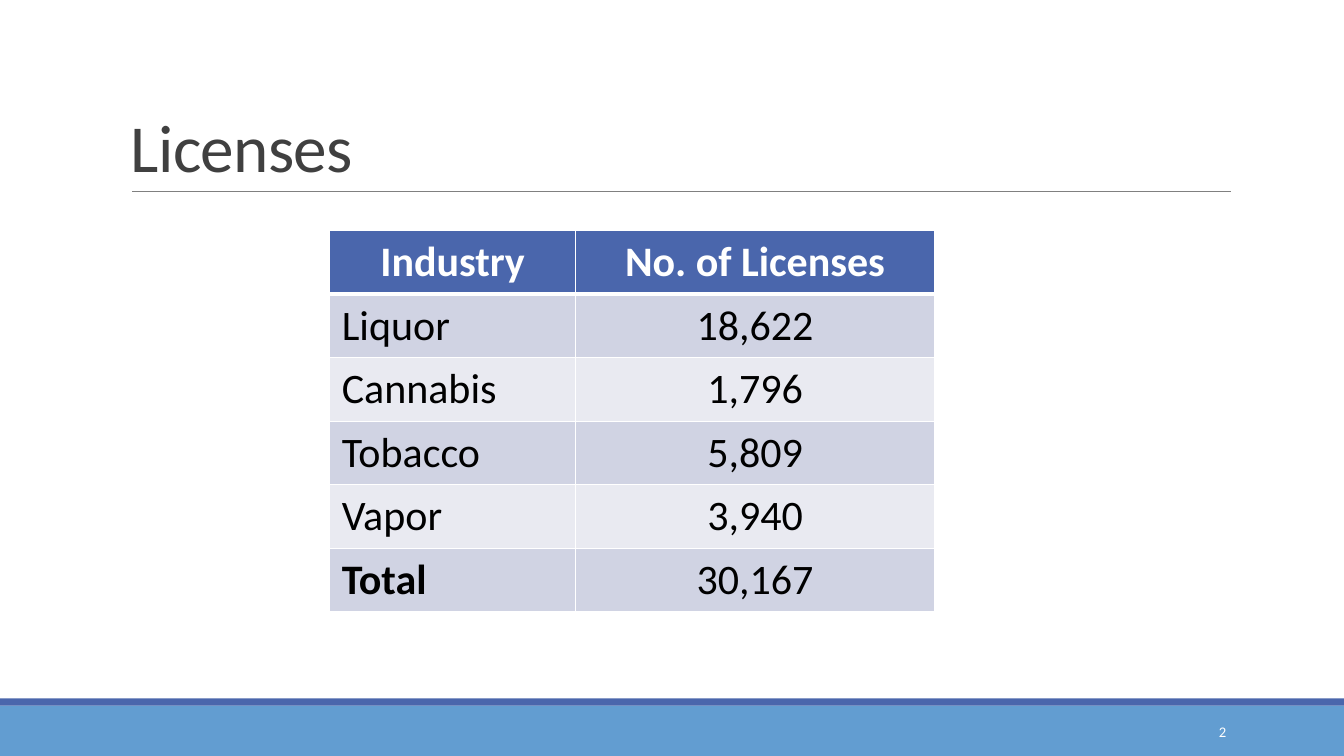
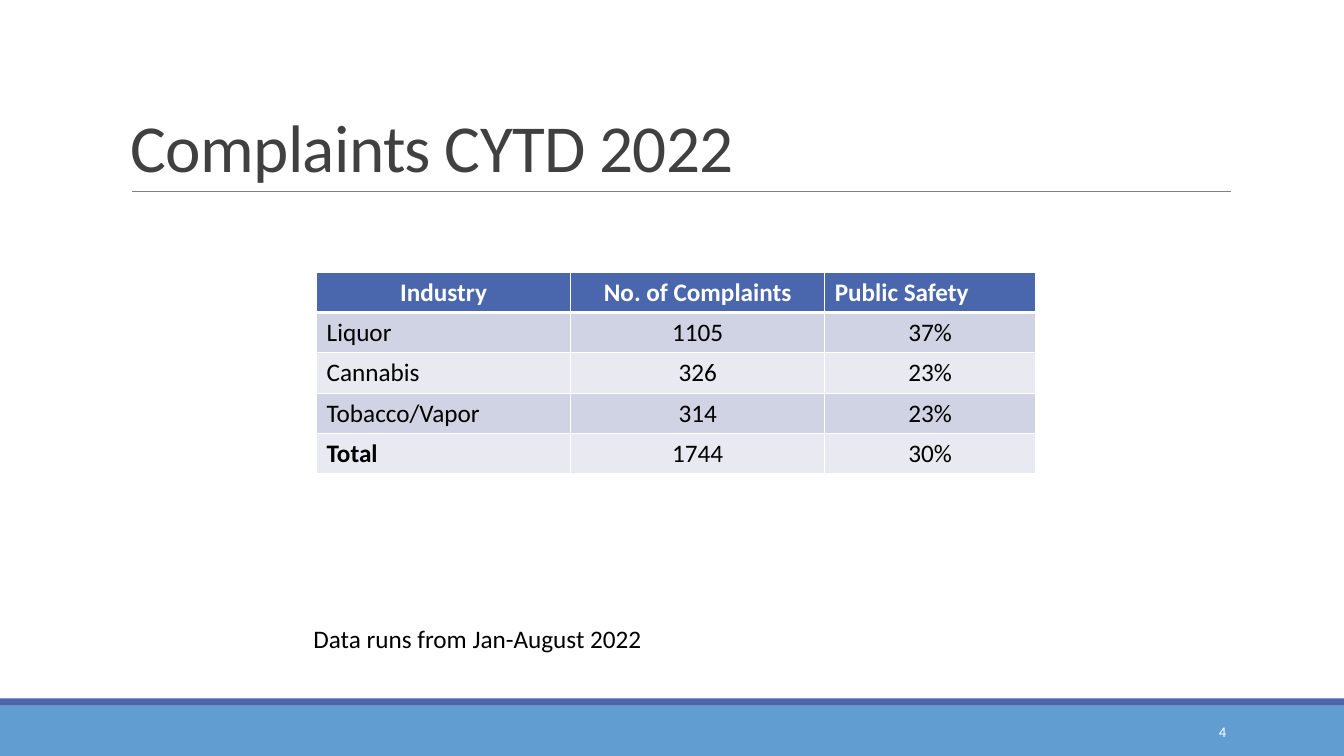
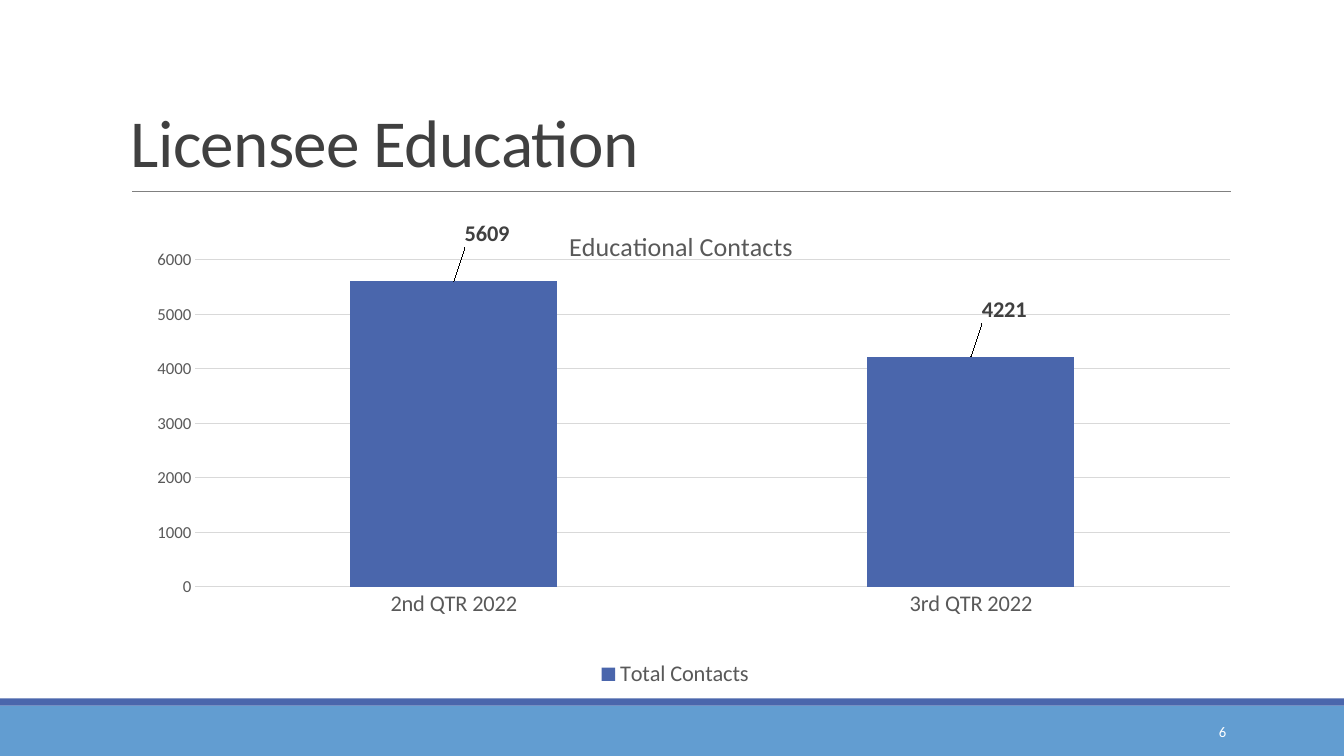
from dataclasses import dataclass
from lxml.etree import SubElement as Sub
from pptx import Presentation
from pptx.chart.data import CategoryChartData as ChartData
from pptx.dml.color import RGBColor as RGB
from pptx.enum.chart import XL_CHART_TYPE as Kind, XL_LABEL_POSITION as Spot
from pptx.enum.chart import XL_LEGEND_POSITION as Side, XL_TICK_MARK as Tick
from pptx.enum.shapes import MSO_CONNECTOR as Link, MSO_SHAPE as Form
from pptx.enum.text import MSO_ANCHOR as Anchor, PP_ALIGN as Align
from pptx.oxml import parse_xml
from pptx.oxml.ns import nsdecls, qn
from pptx.util import Inches, Pt


@dataclass(frozen=True)
class Theme:
    face: str = "Calibri"
    # Colours
    blue: str = "4A66AC"
    sky: str = "629DD1"
    white: str = "FFFFFF"
    black: str = "000000"
    dark: str = "404040"
    gray: str = "595959"
    rule: str = "808080"
    grid: str = "D9D9D9"
    bands: tuple = ("D0D3E3", "E9EAF1")
    # Type sizes
    head: float = 48
    large: float = 30
    body: float = 18
    label: float = 16
    tick: float = 12
    foot: float = 10.5


T = Theme()
WIDE, HIGH = 13.33, 7.5


def style(font, size, tint, bold=False):
    font.name, font.size, font.bold = T.face, Pt(size), bold
    font.color.rgb = RGB.from_string(tint)


def paint(item, tint):
    item.fill.solid()
    item.fill.fore_color.rgb = RGB.from_string(tint)


# Text and frame parts
def add_text(slide, text, box, size, tint, align=Align.LEFT,
             anchor=Anchor.TOP, wrap=True):
    frame = slide.shapes.add_textbox(*map(Inches, box)).text_frame
    frame.word_wrap, frame.vertical_anchor = wrap, anchor
    frame.text = text
    para = frame.paragraphs[0]
    para.alignment = align
    style(para.runs[0].font, size, tint)
    return para


def add_band(slide, top, high, tint):
    band = slide.shapes.add_shape(
        Form.RECTANGLE, 0, Inches(top), Inches(WIDE), Inches(high))
    band.shadow.inherit = False
    paint(band, tint)
    band.line.fill.background()


def add_rule(slide):
    rule = slide.shapes.add_connector(
        Link.STRAIGHT, *map(Inches, (1.31, 1.9, 12.21, 1.9)))
    rule.line.color.rgb = RGB.from_string(T.rule)
    rule.line.width = Pt(0.5)
    Sub(rule._element.spPr, qn("a:effectLst"))


def add_slide(deck, title, page, top=0.31):
    slide = deck.slides.add_slide(deck.slide_layouts[6])
    add_band(slide, 7, 0.5, T.sky)
    add_band(slide, 6.93, 0.07, T.blue)
    add_rule(slide)
    para = add_text(slide, title, (1.2, top, 11, 1.59), T.head, T.dark,
                    anchor=Anchor.BOTTOM)
    para.line_spacing = 0.85
    para.runs[0]._r.get_or_add_rPr().set("spc", "-50")
    add_text(slide, str(page), (10.83, 7.06, 1.43, 0.4), T.foot, T.white,
             Align.RIGHT, Anchor.MIDDLE)
    return slide


# Table parts
def add_edges(cell, row):
    props = cell._tc.get_or_add_tcPr()
    thick = {(0, "B"), (1, "T")}
    for side in "LRTB":
        width = 3 if (row, side) in thick else 1
        line = Sub(props, qn(f"a:ln{side}"), w=str(Pt(width)))
        Sub(Sub(line, qn("a:solidFill")), qn("a:srgbClr"), val=T.white)


def add_grid(slide, left, top, cols, high, rows, size, pad, heads):
    shape = slide.shapes.add_table(
        len(rows), len(cols), Inches(left), Inches(top),
        Inches(sum(cols)), Inches(high * len(rows)))
    table = shape.table
    for col, wide in zip(table.columns, cols):
        col.width = Inches(wide)
    for r, words in enumerate(rows):
        table.rows[r].height = Inches(high)
        for c, word in enumerate(words):
            cell = table.cell(r, c)
            cell.margin_left = cell.margin_right = Inches(pad)
            cell.margin_top = cell.margin_bottom = Inches(pad / 2)
            add_edges(cell, r)
            paint(cell, T.bands[(r - 1) % 2] if r else T.blue)
            cell.text_frame.text = word
            para = cell.text_frame.paragraphs[0]
            body = Align.CENTER if c else Align.LEFT
            para.alignment = body if r else heads[c]
            style(para.runs[0].font, size, T.black if r else T.white,
                  bold=r == 0 or word == "Total")


# Chart parts
def set_place(node, at, inner=False, **vals):
    """Give a chart part a manual layout, as shares of the chart."""
    place = parse_xml(f"<c:layout {nsdecls('c')}/>")
    man = Sub(place, qn("c:manualLayout"))
    if inner:
        Sub(man, qn("c:layoutTarget"), val="inner")
    if node.tag != qn("c:dLbl"):
        for key in ("xMode", "yMode"):
            Sub(man, qn(f"c:{key}"), val="edge")
    for key, val in vals.items():
        Sub(man, qn(f"c:{key}"), val=str(val))
    old = node.find(qn("c:layout"))
    if old is None:
        node.insert(at, place)
    else:
        node.replace(old, place)


def set_axis(axis, size):
    axis.major_tick_mark = axis.minor_tick_mark = Tick.NONE
    axis.format.line.fill.background()
    style(axis.tick_labels.font, size, T.gray)


def add_bars(slide, box, title, cats, name, vals, shifts):
    data = ChartData()
    data.categories = cats
    data.add_series(name, vals)
    chart = slide.shapes.add_chart(
        Kind.COLUMN_CLUSTERED, *map(Inches, box), data).chart
    style(chart.font, 10, T.black)

    # Title, legend and plot area
    frame = chart.chart_title.text_frame
    frame.text = title
    style(frame.paragraphs[0].runs[0].font, 18.6, T.gray)
    set_place(chart.chart_title._element, 1, x=0.4, y=0.04)
    chart.has_legend = True
    chart.legend.position = Side.BOTTOM
    chart.legend.include_in_layout = False
    style(chart.legend.font, T.label, T.gray)
    set_place(chart._chartSpace.chart.plotArea, 0, True,
              x=0.067, y=0.115, w=0.933, h=0.669)

    # Axes
    set_axis(chart.category_axis, T.label)
    axis = chart.value_axis
    set_axis(axis, T.tick)
    axis.minimum_scale, axis.maximum_scale, axis.major_unit = 0, 6000, 1000
    grid = axis.major_gridlines.format.line
    grid.color.rgb, grid.width = RGB.from_string(T.grid), Pt(0.75)

    # Bars and their labels
    plot = chart.plots[0]
    plot.gap_width, plot.vary_by_categories = 150, False
    bars = plot.series[0]
    paint(bars.format, T.blue)
    for i, (x, y) in enumerate(shifts):
        label = bars.points[i].data_label
        style(label.font, T.label, T.dark, True)
        label.position = Spot.OUTSIDE_END
        set_place(label._get_or_add_dLbl(), 1, x=x, y=y)


def main():
    deck = Presentation()
    deck.slide_width, deck.slide_height = Inches(WIDE), Inches(HIGH)
    mid = Align.CENTER

    # Licenses
    slide = add_slide(deck, "Licenses", 2)
    add_grid(slide, 3.27, 2.29, (2.44, 3.56), 0.63, [
        ("Industry", "No. of Licenses"),
        ("Liquor", "18,622"),
        ("Cannabis", "1,796"),
        ("Tobacco", "5,809"),
        ("Vapor", "3,940"),
        ("Total", "30,167"),
    ], T.large, 0.12, (mid, mid))

    # Complaints
    slide = add_slide(deck, "Complaints CYTD 2022", 4)
    add_grid(slide, 3.14, 2.7, (2.52, 2.52, 2.09), 0.4, [
        ("Industry", "No. of Complaints", "Public Safety"),
        ("Liquor", "1105", "37%"),
        ("Cannabis", "326", "23%"),
        ("Tobacco/Vapor", "314", "23%"),
        ("Total", "1744", "30%"),
    ], T.body, 0.1, (mid, mid, Align.LEFT))
    add_text(slide, "Data runs from Jan-August 2022", (3.01, 6.13, 3.49, 0.4),
             T.body, T.black, wrap=False)

    # Education
    slide = add_slide(deck, "Licensee Education", 6, top=0.26)
    add_bars(slide, (1.2, 2.02, 11, 4.85), "Educational Contacts",
             ("2nd QTR 2022", "3rd QTR 2022"), "Total Contacts",
             (5609, 4221), ((0.03, -0.06), (0.03, -0.06)))

    deck.save("out.pptx")


if __name__ == "__main__":
    main()
